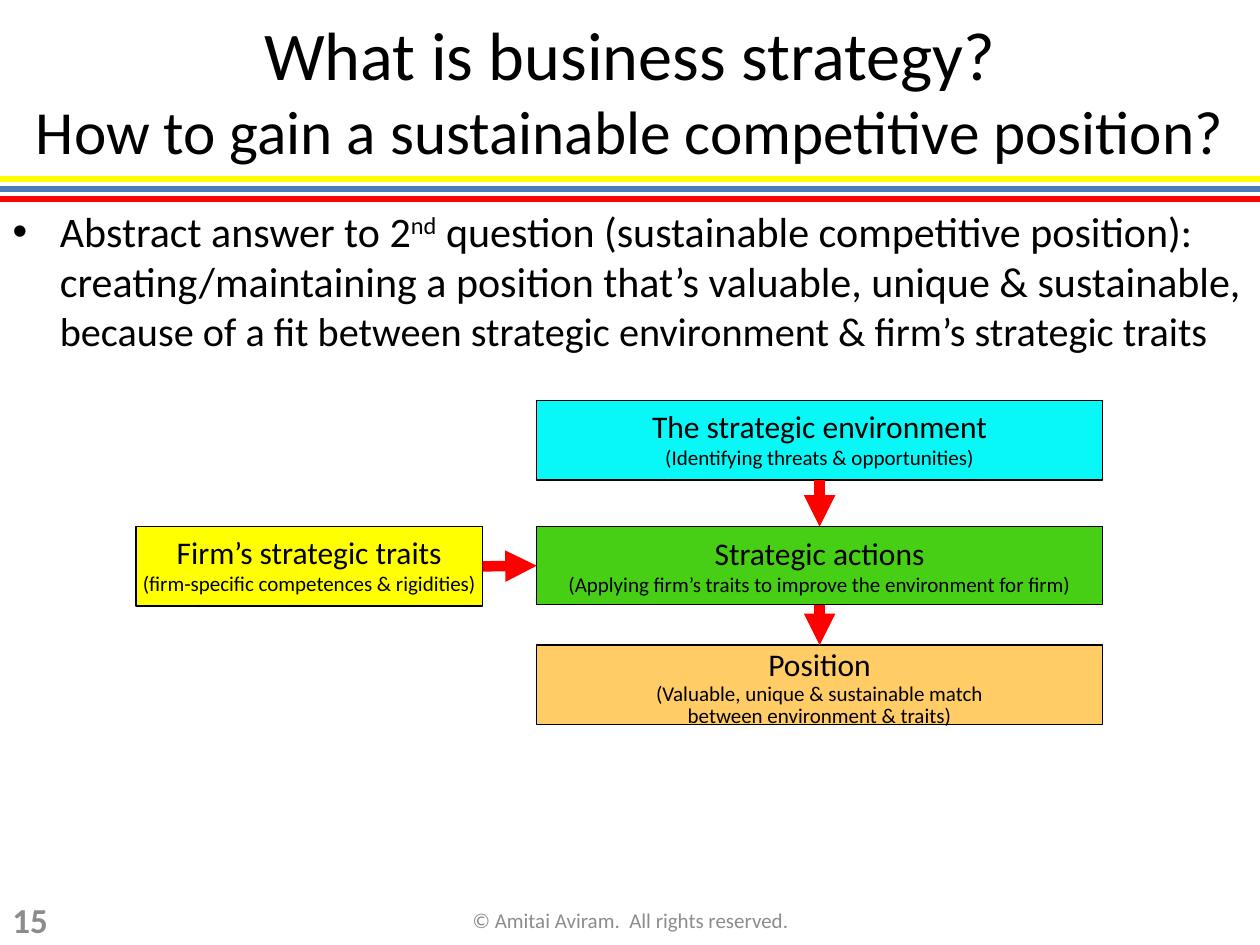
from pptx import Presentation
from pptx.dml.color import RGBColor
from pptx.enum.shapes import MSO_CONNECTOR, MSO_SHAPE
from pptx.enum.text import MSO_ANCHOR, MSO_AUTO_SIZE, PP_ALIGN
from pptx.oxml.ns import qn
from pptx.util import Inches, Pt
from lxml.etree import SubElement

BLACK = RGBColor(0x00, 0x00, 0x00)
GRAY = RGBColor(0x8C, 0x8C, 0x8C)
RED = RGBColor(0xFF, 0x00, 0x00)
BLUE = RGBColor(0x4B, 0x7E, 0xBC)
YELLOW = RGBColor(0xFF, 0xFF, 0x00)
CYAN = RGBColor(0x08, 0xF8, 0xF8)
GREEN = RGBColor(0x46, 0xCF, 0x15)
ORANGE = RGBColor(0xFF, 0xCC, 0x66)

TITLE = [("What is business strategy?\n", 39),
         ("How to gain a sustainable competitive position?", 35)]
BODY = [("Abstract answer to 2", 24),
        ("nd", 24, 30000),
        (" question (sustainable competitive position): creating/maintaining "
         "a position that’s valuable, unique & sustainable, ", 24),
        ("because of a fit between strategic environment & firm’s strategic traits", 23)]
RULES = [(1.42, YELLOW), (1.5, BLUE), (1.58, RED)]
BOXES = {
    "environment": (4.26, 3.18, 4.49, 0.63, CYAN, 0.05, 1,
                    "The strategic environment", "(Identifying threats & opportunities)"),
    "actions": (4.26, 4.18, 4.49, 0.62, GREEN, 0.06, 1, "Strategic actions",
                "(Applying firm’s traits to improve the environment for firm)"),
    "position": (4.26, 5.12, 4.49, 0.63, ORANGE, 0.03, 0.9, "Position",
                 "(Valuable, unique & sustainable match\nbetween environment & traits)"),
    "traits": (1.08, 4.18, 2.75, 0.63, YELLOW, 0.05, 1, "Firm’s strategic traits",
               "(firm-specific competences & rigidities)"),
}
TOP, LEFT, BOTTOM, RIGHT = range(4)
ARROWS = [("environment", BOTTOM, "actions", TOP),
          ("actions", BOTTOM, "position", TOP),
          ("traits", RIGHT, "actions", LEFT)]
FOOTERS = [(0, 0.67, "15", 20, True, PP_ALIGN.LEFT),
           (3.42, 3.17, "© Amitai Aviram.  All rights reserved.", 12, False, PP_ALIGN.CENTER)]


def write(frame, runs, color=BLACK, bold=False, align=None,
          anchor=MSO_ANCHOR.TOP, side=0.1, top=0.05, space=1):
    frame.word_wrap = True
    frame.auto_size = MSO_AUTO_SIZE.NONE
    frame.vertical_anchor = anchor
    frame.margin_left = frame.margin_right = Inches(side)
    frame.margin_top = Inches(top)
    para = frame.paragraphs[0]
    para.alignment = align
    para.line_spacing = space
    for text, size, *raised in runs:
        for i, part in enumerate(text.split("\n")):
            if i:
                para.add_line_break()
            if not part:
                continue
            run = para.add_run()
            run.text = part
            font = run.font
            font.name, font.size, font.bold = "Calibri", Pt(size), bold
            font.color.rgb = color
            if raised:
                font._element.set("baseline", str(raised[0]))


def place(shape, *area):
    shape.left, shape.top, shape.width, shape.height = map(Inches, area)
    return shape


def join(start, end, color, width):
    line = slide.shapes.add_connector(MSO_CONNECTOR.STRAIGHT, *map(Inches, start + end))
    line.line.color.rgb = color
    line.line.width = Pt(width)
    SubElement(line._element.spPr, qn("a:effectLst"))
    return line


deck = Presentation()
deck.slide_width, deck.slide_height = Inches(10), Inches(7.5)
slide = deck.slides.add_slide(deck.slide_layouts[1])

for y, color in RULES:
    join((0, y), (10, y), color, 3)

title = place(slide.shapes.title, 0, 0, 10, 1.42)
write(title.text_frame, TITLE, align=PP_ALIGN.CENTER, anchor=MSO_ANCHOR.MIDDLE)
body = place(slide.placeholders[1], 0, 1.58, 10, 5.67)
write(body.text_frame, BODY)

boxes = {}
for name, (x, y, w, h, fill, top, space, head, note) in BOXES.items():
    box = slide.shapes.add_shape(MSO_SHAPE.RECTANGLE, *map(Inches, (x, y, w, h)))
    box.shadow.inherit = False
    box.fill.solid()
    box.fill.fore_color.rgb = fill
    box.line.color.rgb = BLACK
    box.line.width = Pt(0.75)
    write(box.text_frame, [(head + "\n", 18), (note, 12)],
          align=PP_ALIGN.CENTER, side=0.01, top=top, space=space)
    boxes[name] = box

for first, out, last, into in ARROWS:
    arrow = join((0, 0), (0, 0), RED, 6)
    arrow.begin_connect(boxes[first], out)
    arrow.end_connect(boxes[last], into)
    SubElement(arrow.line._get_or_add_ln(), qn("a:tailEnd"), type="triangle")

for x, w, text, size, bold, align in FOOTERS:
    note = slide.shapes.add_textbox(*map(Inches, (x, 7.1, w, 0.4)))
    write(note.text_frame, [(text, size)], color=GRAY, bold=bold,
          align=align, anchor=MSO_ANCHOR.MIDDLE)

deck.save("out.pptx")
